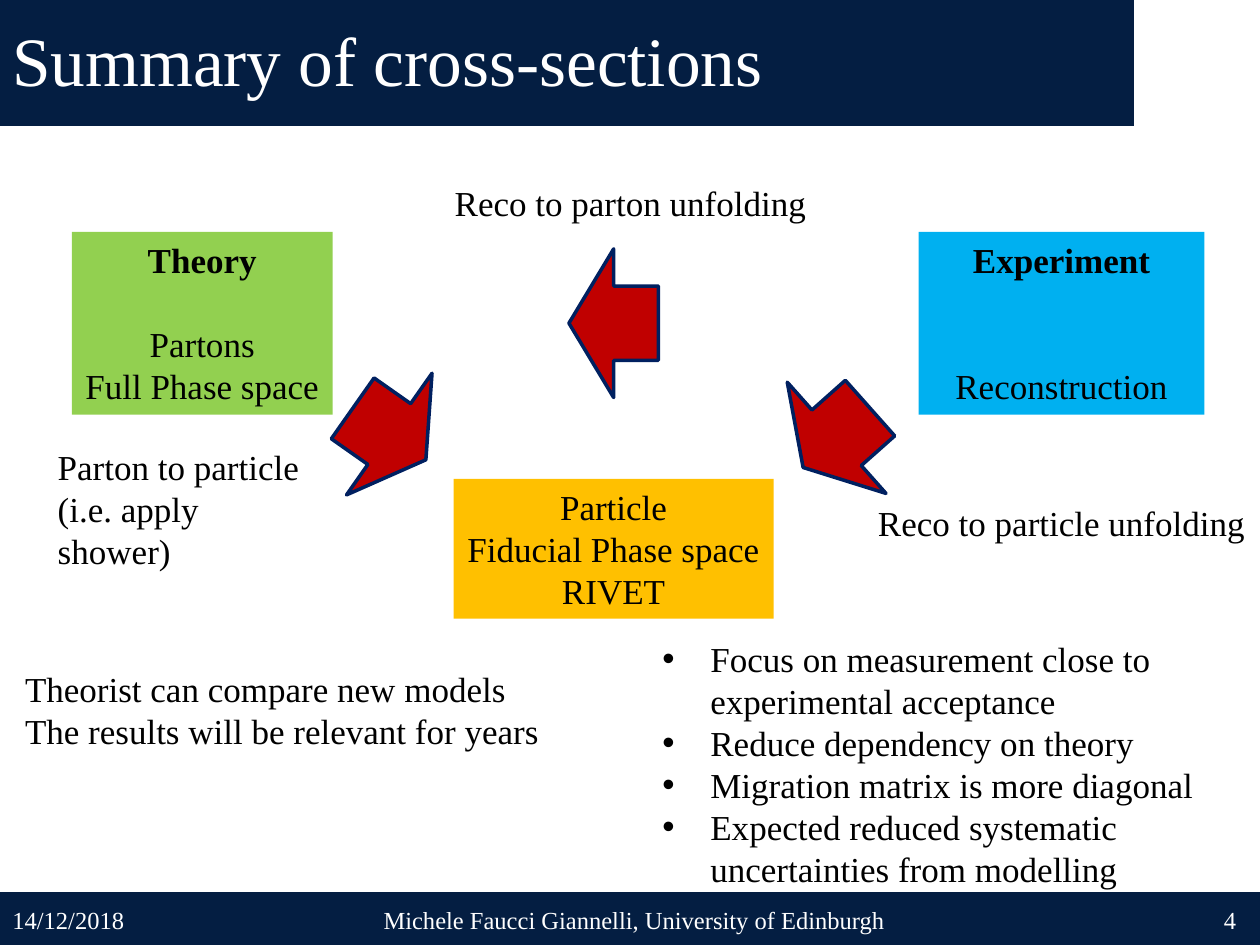
from dataclasses import dataclass

from lxml.etree import SubElement
from pptx import Presentation
from pptx.dml.color import RGBColor as Color
from pptx.enum.shapes import MSO_SHAPE as Preset
from pptx.enum.text import MSO_ANCHOR as Anchor, PP_ALIGN as Align
from pptx.oxml.ns import qn
from pptx.util import Inches, Pt


@dataclass(frozen=True)
class Theme:
    font: str = "Times New Roman"
    navy: str = "041E42"
    outline: str = "002060"
    red: str = "C00000"
    green: str = "92D050"
    blue: str = "00B0F0"
    amber: str = "FFC000"
    white: str = "FFFFFF"
    black: str = "000000"
    title: float = 39.6
    body: float = 20
    footer: float = 14
    leading: float = 24


theme = Theme()
deck = Presentation()
deck.slide_width, deck.slide_height = Inches(10), Inches(7.5)
page = deck.slides.add_slide(deck.slide_layouts[6])


def add_block(preset, place, fill):
    block = page.shapes.add_shape(preset, *map(Inches, place))
    block.shadow.inherit = False
    block.fill.solid()
    block.fill.fore_color.rgb = Color.from_string(fill)
    block.line.fill.background()
    return block


def write(box, lines, size=theme.body, color=theme.black, align=Align.LEFT,
          anchor=Anchor.TOP, wrap=True, bullet=False, heading=False, gap=0):
    frame = box.text_frame
    frame.word_wrap = wrap
    frame.vertical_anchor = anchor
    for index, line in enumerate(lines):
        para = frame.paragraphs[0] if index == 0 else frame.add_paragraph()
        para.alignment = align
        if size == theme.body:
            para.line_spacing = Pt(theme.leading)
        if gap and index == 1:
            para.space_before = Pt(gap * theme.leading)
        if bullet:
            properties = para._p.get_or_add_pPr()
            properties.set("marL", str(Inches(0.38)))
            properties.set("indent", str(-Inches(0.38)))
            SubElement(properties, qn("a:buFont"), typeface="Arial")
            SubElement(properties, qn("a:buChar"), char="•")
        span = para.add_run()
        span.text = line
        style = {"name": theme.font, "size": Pt(size), "bold": heading and index == 0}
        for name, value in style.items():
            setattr(span.font, name, value)
        span.font.color.rgb = Color.from_string(color)


for place in [(0, 0, 9, 1), (0, 7.08, 10, 0.42)]:
    add_block(Preset.RECTANGLE, place, theme.navy)

bar_texts = [
    ((0, 0.08, 9, 0.78), "Summary of cross-sections", theme.title, Align.LEFT),
    ((0, 7.1, 2.33, 0.4), "14/12/2018", theme.footer, Align.LEFT),
    ((2.87, 7.1, 4.33, 0.4), "Michele Faucci Giannelli, University of Edinburgh",
     theme.footer, Align.CENTER),
    ((7.58, 7.1, 2.33, 0.4), "4", theme.footer, Align.RIGHT),
]
for place, text, size, align in bar_texts:
    box = page.shapes.add_textbox(*map(Inches, place))
    write(box, [text], size, theme.white, align, Anchor.MIDDLE)

stages = [
    ((0.57, 1.84, 2.07, 1.45), theme.green,
     ["Theory", "Partons", "Full Phase space"],
     {"heading": True, "gap": 1, "wrap": False}),
    ((7.29, 1.84, 2.27, 1.45), theme.blue,
     ["Experiment", "Reconstruction"], {"heading": True, "gap": 2}),
    ((3.6, 3.8, 2.54, 1.11), theme.amber,
     ["Particle", "Fiducial Phase space", "RIVET"], {"wrap": False}),
]
for place, fill, lines, options in stages:
    stage = add_block(Preset.RECTANGLE, place, fill)
    write(stage, lines, align=Align.CENTER, **options)

for left, top, angle in [(2.5, 3.09, 305.1), (6.05, 3.12, 48.4), (4.28, 2.21, 90)]:
    arrow = add_block(Preset.DOWN_ARROW, (left, top, 1.18, 0.71), theme.red)
    arrow.rotation = angle
    arrow.line.color.rgb = Color.from_string(theme.outline)
    arrow.line.width = Pt(2)

notes = [
    ((5.16, 5.01, 4.84, 2.12),
     ["Focus on measurement close to experimental acceptance",
      "Reduce dependency on theory",
      "Migration matrix is more diagonal",
      "Expected reduced systematic uncertainties from modelling"],
     {"bullet": True}),
    ((0.1, 5.25, 4.31, 0.77),
     ["Theorist can compare new models", "The results will be relevant for years"],
     {"wrap": False}),
    ((3.51, 1.39, 3.01, 0.44), ["Reco to parton unfolding"], {"wrap": False}),
    ((6.87, 3.93, 3.13, 0.44), ["Reco to particle unfolding"], {"wrap": False}),
    ((0.36, 3.49, 2.28, 0.77), ["Parton to particle (i.e. apply shower)"], {}),
]
for place, lines, options in notes:
    write(page.shapes.add_textbox(*map(Inches, place)), lines, **options)

deck.save("out.pptx")
